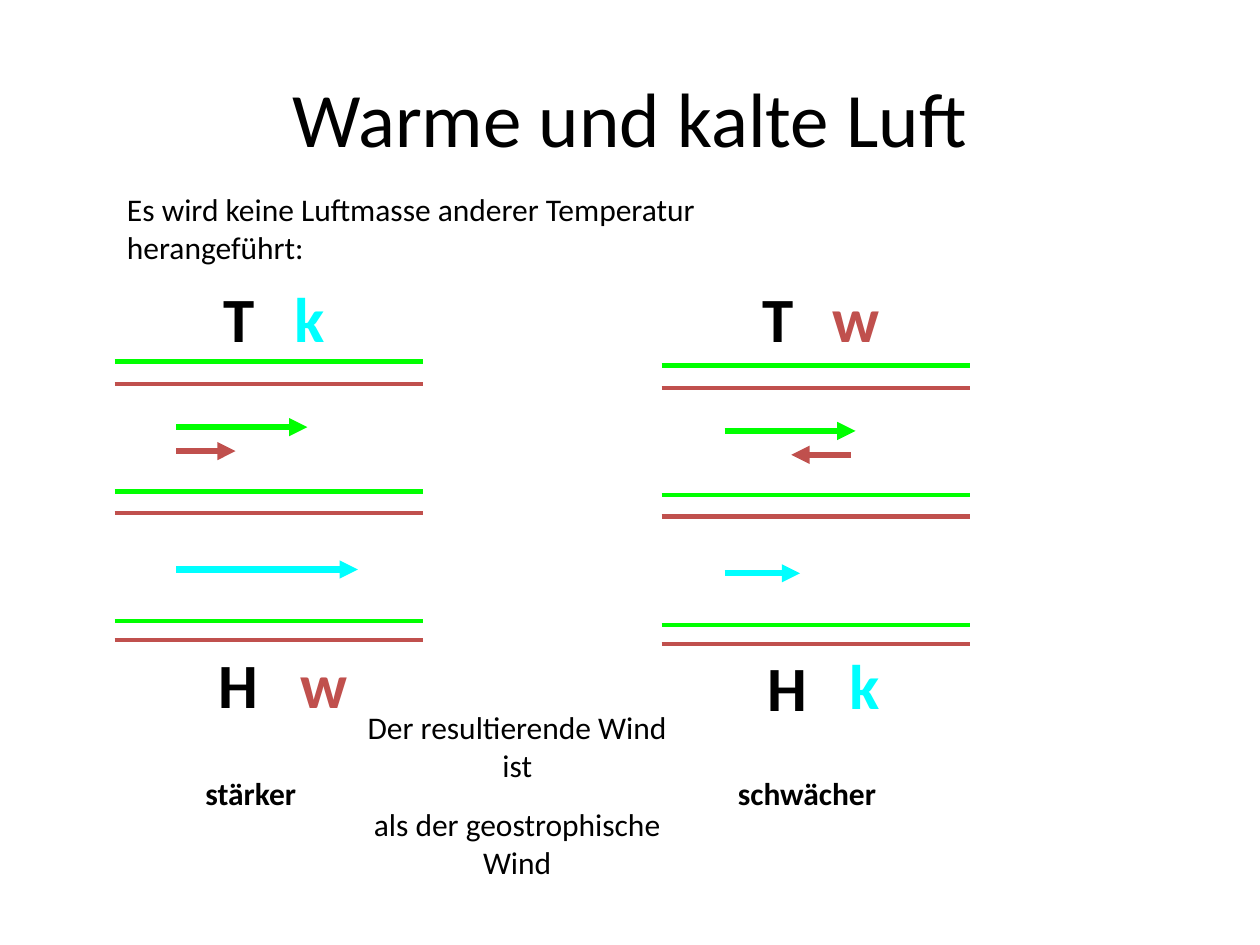
from dataclasses import dataclass

from lxml import etree
from pptx import Presentation
from pptx import util as u
from pptx.dml.color import RGBColor
from pptx.enum import shapes, text
from pptx.oxml import ns


@dataclass(frozen=True)
class Theme:
    font: str = "Calibri"
    ink: str = "000000"
    wind: str = "00FF00"
    warm: str = "C0504D"
    cold: str = "00FFFF"
    title: int = 44
    mark: int = 36
    body: int = 18
    rule: float = 2.5
    arrow: float = 3.5


T = Theme()
COLS, ROWS = 100, 75  # square grid over the slide
CELL = u.Inches(10) // COLS
MID, LEFT = text.PP_ALIGN.CENTER, text.PP_ALIGN.LEFT


def grid(*vals):
    return [round(v * CELL) for v in vals]


def write(page, box, words, size, color=T.ink, bold=False, align=MID, wrap=False):
    frame = page.shapes.add_textbox(*grid(*box)).text_frame
    frame.word_wrap = wrap
    frame.vertical_anchor = text.MSO_ANCHOR.MIDDLE
    para = frame.paragraphs[0]
    para.alignment = align
    run = para.add_run()
    run.text = words
    font = run.font
    font.name, font.size, font.bold = T.font, u.Pt(size), bold
    font.color.rgb = RGBColor.from_string(color)


def draw(page, x1, x2, y, color, width, head=False):
    line = page.shapes.add_connector(
        shapes.MSO_CONNECTOR.STRAIGHT, *grid(x1, y, x2, y))
    line.line.color.rgb = RGBColor.from_string(color)
    line.line.width = u.Pt(width)
    if head:
        etree.SubElement(line.line._get_or_add_ln(), ns.qn("a:tailEnd"),
                         type="triangle")
    etree.SubElement(line._element.spPr, ns.qn("a:effectLst"))


def panel(page, box, marks, winds):
    left, top, wide = box
    # Pressure and temperature letters
    for word, color, x, y, w in marks:
        write(page, (left + x, top + y, w, 7), word, T.mark, color, True)
    # Isobars and isotherms
    for color, rows in ((T.wind, (0, 10.3, 20.6)), (T.warm, (1.8, 12, 22.1))):
        for y in rows:
            draw(page, left, left + wide, top + y, color, T.rule)
    # Wind arrows: geostrophic, thermal, resulting
    for color, y, (x1, x2) in zip((T.wind, T.warm, T.cold), (5.2, 7.1, 16.5), winds):
        draw(page, left + x1, left + x2, top + y, color, T.arrow, True)


def header(page, box):
    left, top, wide, high = box
    write(page, (left, top, wide, high), "Warme und kalte Luft", T.title, wrap=True)
    write(page, (left + 4.1, top + 13.1, 61.3, 4),
          "Es wird keine Luftmasse anderer Temperatur herangeführt:",
          T.body, align=LEFT, wrap=True)


def result(page, box):
    left, top, wide = box
    # Verdict under each panel
    for word, x, w in (("stärker", 0, 9.8), ("schwächer", 42.4, 13.3)):
        write(page, (left + x, top + 3.7, w, 4), word, T.body, bold=True)
    # Shared sentence, centred between the verdicts
    for words, y, w in (("Der resultierende Wind ist", 0, 28.5),
                        ("als der geostrophische Wind", 7.7, 30.4)):
        write(page, (left + (wide - w) / 2, top + y, w, 4), words, T.body, wrap=True)


def main():
    deck = Presentation()
    deck.slide_width, deck.slide_height = grid(COLS, ROWS)
    page = deck.slides.add_slide(deck.slide_layouts[6])
    header(page, (5, 3, 90, 12.5))
    panel(page, (9.1, 28.7, 24.5),
          (("T", T.ink, 7.2, -7, 5.3), ("k", T.cold, 13.1, -7, 4.8),
           ("H", T.ink, 6.9, 22, 5.9), ("w", T.warm, 13.8, 22, 5.6)),
          ((4.9, 15.3), (4.9, 9.6), (4.9, 19.3)))
    panel(page, (52.5, 29, 24.5),
          (("T", T.ink, 6.6, -7.3, 5.3), ("w", T.warm, 12.6, -7.3, 5.6),
           ("H", T.ink, 7, 22, 5.9), ("k", T.cold, 13.7, 21.8, 4.8)),
          ((5, 15.4), (15, 10.3), (5, 11)))
    result(page, (15, 57.2, 52.1))
    deck.save("out.pptx")


if __name__ == "__main__":
    main()
